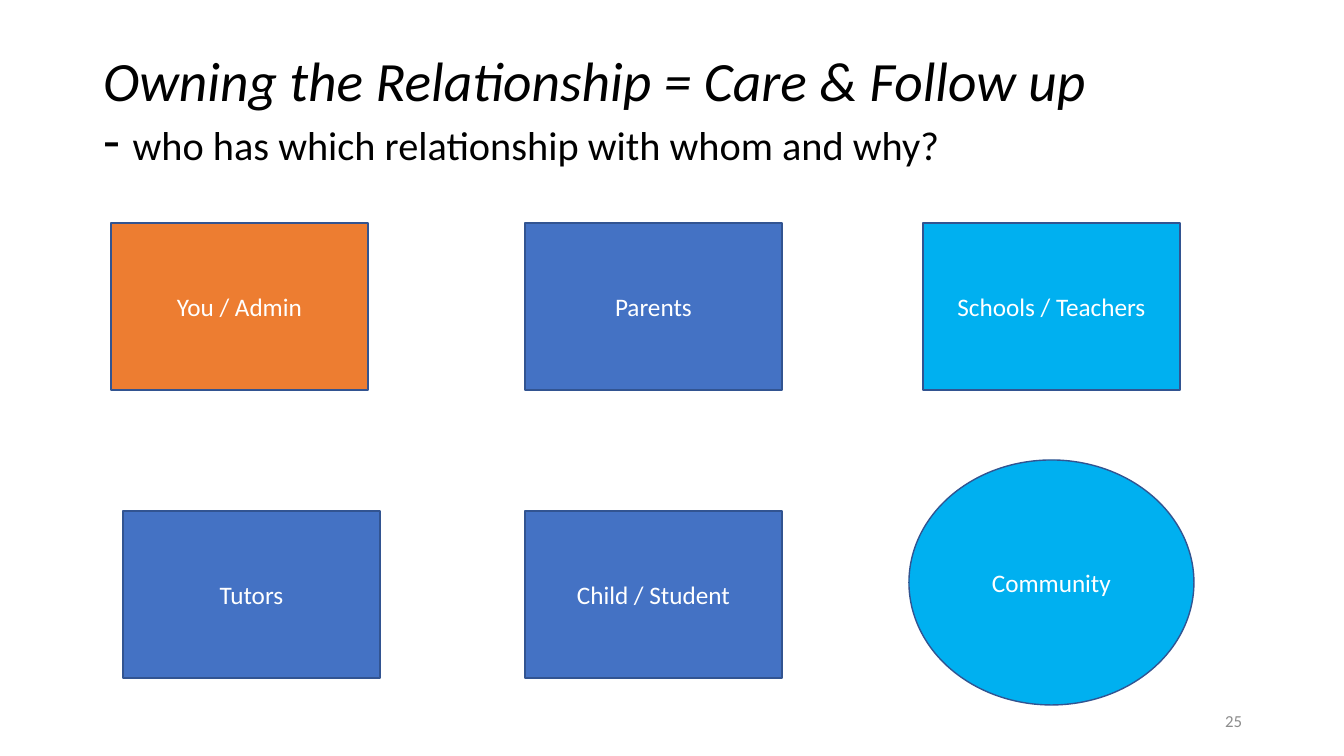
"""Build the slide on who owns which relationship in the tutoring network."""
from pptx import Presentation
from pptx import util as u
from pptx.dml.color import RGBColor
from pptx.enum import shapes, text

THEME = {
    "font": "Calibri",
    "ink": "000000", "label": "FFFFFF", "number": "8C8C8C", "outline": "325491",
    "admin": "ED7D31", "family": "4472C4", "outside": "00B0F0",
    "title_size": 39.6, "subtitle_size": 28.8, "label_size": 18, "number_size": 12,
}


def px(length):
    return u.Inches(length / 100.8)


def write(paragraph, words, size, color, italic=False):
    run = paragraph.add_run()
    run.text = words
    formats = {"name": THEME["font"], "size": u.Pt(THEME[size]), "italic": italic}
    for attribute, value in formats.items():
        setattr(run.font, attribute, value)
    run.font.color.rgb = RGBColor.from_string(THEME[color])


deck = Presentation()
deck.slide_width, deck.slide_height = px(1344), px(756)
slide = deck.slides.add_slide(deck.slide_layouts[5])

title = slide.shapes.title
title_place = {"left": 93, "top": 40, "width": 1041, "height": 146}
for side, length in title_place.items():
    setattr(title, side, px(length))
title_format = {
    "word_wrap": True,
    "auto_size": text.MSO_AUTO_SIZE.NONE,
    "vertical_anchor": text.MSO_ANCHOR.MIDDLE,
}
for attribute, value in title_format.items():
    setattr(title.text_frame, attribute, value)
heading = title.text_frame.paragraphs[0]
heading.alignment = text.PP_ALIGN.LEFT
heading.line_spacing = 0.9
write(heading, "Owning the Relationship = Care & Follow up", "title_size", "ink", True)
heading.add_line_break()
write(heading, "- ", "title_size", "ink")
write(heading, "who has which relationship with whom and why?", "subtitle_size", "ink")

BOX, CIRCLE = shapes.MSO_SHAPE.RECTANGLE, shapes.MSO_SHAPE.OVAL
sizes = {BOX: (257, 167), CIRCLE: (285, 245)}
top_row, bottom_row, middle_column = 223, 511, 525
parties = [
    ("You / Admin", BOX, 111, top_row, "admin"),
    ("Child / Student", BOX, middle_column, bottom_row, "family"),
    ("Parents", BOX, middle_column, top_row, "family"),
    ("Tutors", BOX, 123, bottom_row, "family"),
    ("Schools / Teachers", BOX, 923, top_row, "outside"),
    ("Community", CIRCLE, 909, 460, "outside"),
]
for name, outline, left, top, fill in parties:
    width, height = sizes[outline]
    party = slide.shapes.add_shape(outline, px(left), px(top), px(width), px(height))
    party.shadow.inherit = False
    party.fill.solid()
    party.fill.fore_color.rgb = RGBColor.from_string(THEME[fill])
    party.line.color.rgb = RGBColor.from_string(THEME["outline"])
    party.line.width = u.Pt(1)
    party.text_frame.word_wrap = True
    party.text_frame.vertical_anchor = text.MSO_ANCHOR.MIDDLE
    label = party.text_frame.paragraphs[0]
    label.alignment = text.PP_ALIGN.CENTER
    write(label, name, "label_size", "label")

page_number = slide.shapes.add_textbox(px(950), px(701), px(302), px(40))
page_number.text_frame.word_wrap = True
page_number.text_frame.vertical_anchor = text.MSO_ANCHOR.MIDDLE
number_line = page_number.text_frame.paragraphs[0]
number_line.alignment = text.PP_ALIGN.RIGHT
write(number_line, "25", "number_size", "number")

deck.save("out.pptx")
